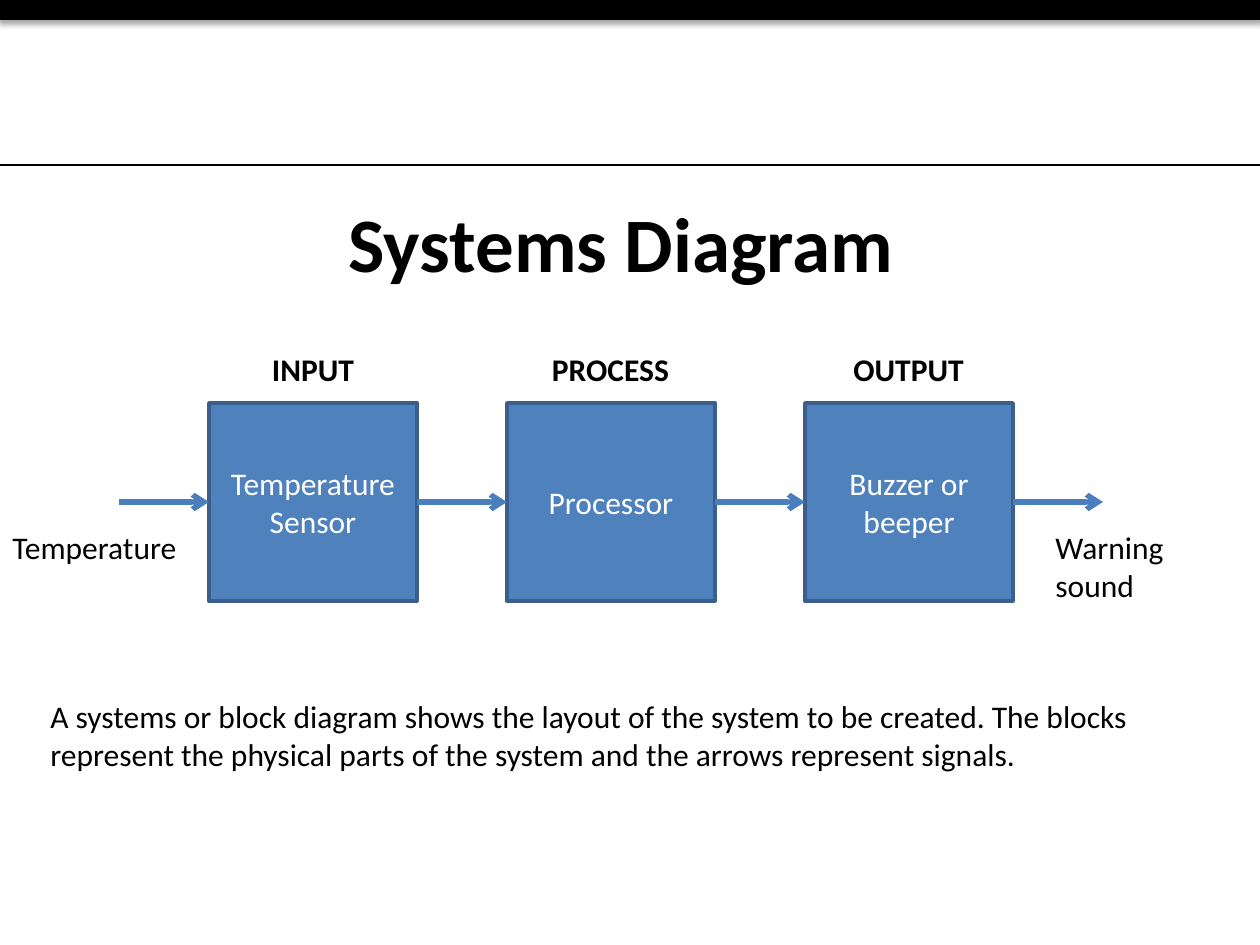
import pptx
import pptx.util
import pptx.oxml
from pptx.dml.color import RGBColor
from pptx.enum.shapes import MSO_CONNECTOR, MSO_SHAPE
from pptx.enum.text import MSO_ANCHOR, MSO_AUTO_SIZE, PP_ALIGN
from pptx.oxml.ns import qn

BLACK = RGBColor(0x00, 0x00, 0x00)
WHITE = RGBColor(0xFF, 0xFF, 0xFF)
BLUE = RGBColor(0x4F, 0x81, 0xBD)
EDGE = RGBColor(0x3A, 0x5F, 0x8C)
ARROW = RGBColor(0x4B, 0x7E, 0xBC)
NS = 'xmlns:a="http://schemas.openxmlformats.org/drawingml/2006/main"'
PX = 914400 / 126


def write(frame, text, size=18, color=BLACK, bold=False,
          align=PP_ALIGN.LEFT, anchor=MSO_ANCHOR.TOP):
    frame.word_wrap = True
    frame.auto_size = MSO_AUTO_SIZE.NONE
    frame.vertical_anchor = anchor
    par = frame.paragraphs[0]
    par.alignment = align
    run = par.add_run()
    run.text = text
    run.font.name = "Calibri"
    run.font.size = pptx.util.Pt(size)
    run.font.bold = bold
    run.font.color.rgb = color


def rule(x1, x2, y, color, width):
    """Draw a level line without a shadow."""
    ends = [round(n * PX) for n in (x1, y, x2, y)]
    line = slide.shapes.add_connector(MSO_CONNECTOR.STRAIGHT, *ends)
    line.line.color.rgb = color
    line.line.width = pptx.util.Pt(width)
    line._element.spPr.append(pptx.oxml.parse_xml(f"<a:effectLst {NS}/>"))
    return line


deck = pptx.Presentation()
deck.slide_width = round(1260 * PX)
deck.slide_height = round(945 * PX)
slide = deck.slides.add_slide(deck.slide_layouts[6])

# Top bar, block squares: left, top, width, height, fill, edge, edge width, text
LEFT, TOP, WIDE, HIGH, STEP = 209, 403, 208, 198, 298
stages = [
    ("INPUT", 110, "Temperature Sensor"),
    ("PROCESS", 149, "Processor"),
    ("OUTPUT", 169, "Buzzer or beeper"),
]
boxes = [(-1, 0, 1262, 19, BLACK, BLACK, 0.75, "")]
for i, (head, width, part) in enumerate(stages):
    boxes.append((LEFT + i * STEP, TOP, WIDE, HIGH, BLUE, EDGE, 2, part))

for x, y, w, h, fill, edge, thick, part in boxes:
    box = slide.shapes.add_shape(
        MSO_SHAPE.RECTANGLE, *[round(n * PX) for n in (x, y, w, h)])
    box.shadow.inherit = False
    box.fill.solid()
    box.fill.fore_color.rgb = fill
    box.line.color.rgb = edge
    box.line.width = pptx.util.Pt(thick)
    if part:
        write(box.text_frame, part, color=WHITE,
              align=PP_ALIGN.CENTER, anchor=MSO_ANCHOR.MIDDLE)
    else:
        glow = box._element.spPr.find(qn("a:effectLst"))
        glow.append(pptx.oxml.parse_xml(
            f'<a:outerShdw {NS} blurRad="39370" dist="22860" dir="5400000" '
            'rotWithShape="0"><a:srgbClr val="000000">'
            '<a:alpha val="35000"/></a:srgbClr></a:outerShdw>'))

rule(-1, 1261, 165, BLACK, 1.5)

# One arrow into each block and one out of the last
for i in range(len(stages) + 1):
    end = LEFT + i * STEP
    arrow = rule(end - STEP + WIDE, end, TOP + HIGH // 2, ARROW, 3)
    arrow.line._get_or_add_ln().append(
        pptx.oxml.parse_xml(f'<a:tailEnd {NS} type="arrow"/>'))

# Headings centred over the blocks, then the other texts
mid = {"align": PP_ALIGN.CENTER, "bold": True}
texts = [
    (54, 180, 1134, 124, "Systems Diagram",
     {"size": 44, "anchor": MSO_ANCHOR.MIDDLE, **mid}),
    (1043, 522, 183, 89, "Warning sound", {}),
    (0, 522, 199, 50, "Temperature", {}),
    (38, 691, 1176, 89,
     "A systems or block diagram shows the layout of the system to be "
     "created. The blocks represent the physical parts of the system and "
     "the arrows represent signals.", {}),
]
for i, (head, width, part) in enumerate(stages):
    x = LEFT + i * STEP + (WIDE - width) // 2
    texts.append((x, 344, width, 50, head, mid))

for x, y, w, h, text, style in texts:
    box = slide.shapes.add_textbox(*[round(n * PX) for n in (x, y, w, h)])
    write(box.text_frame, text, **style)

deck.save("out.pptx")
